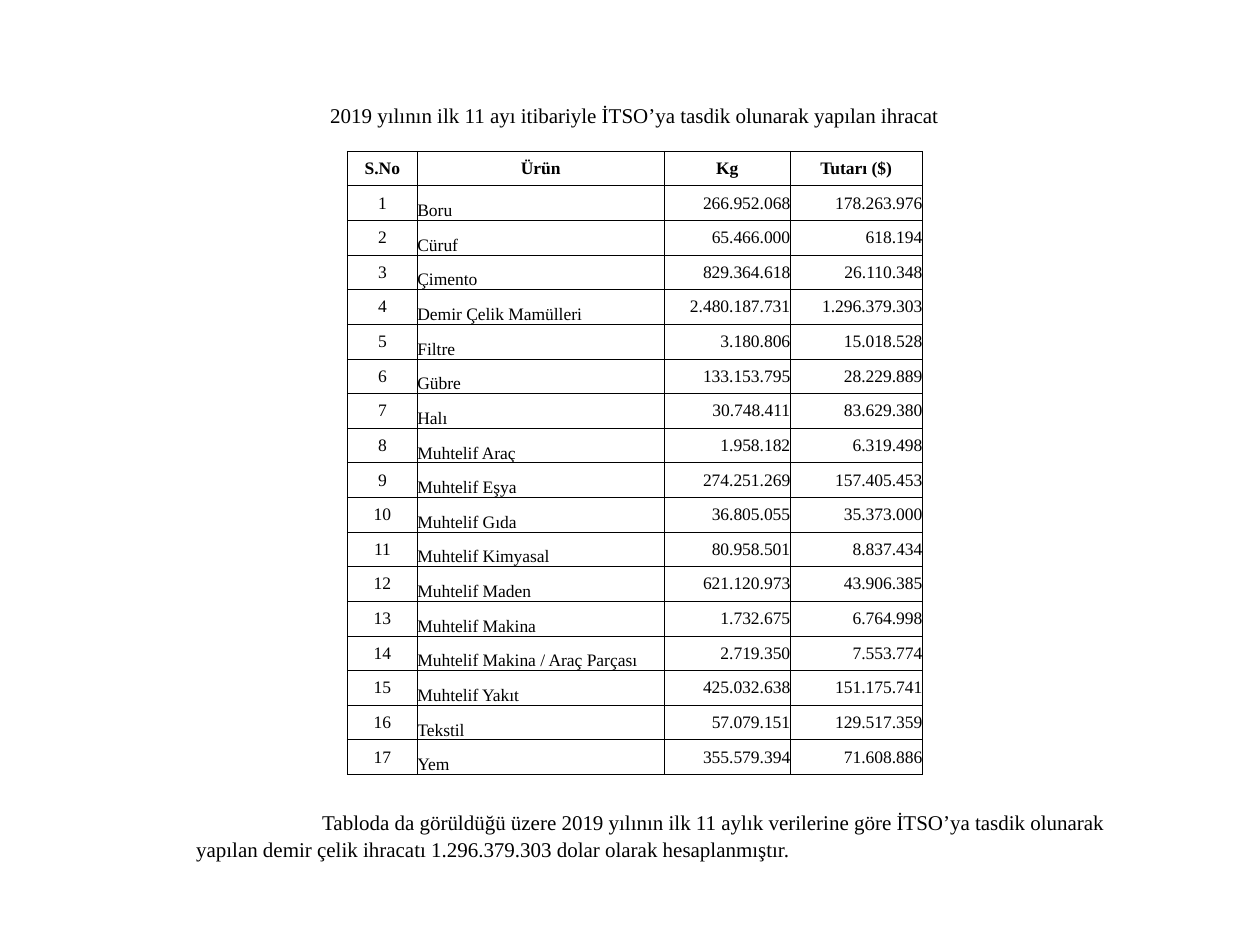
from lxml import etree
from pptx import Presentation
from pptx.dml.color import RGBColor
from pptx.enum.text import MSO_ANCHOR, MSO_AUTO_SIZE, PP_ALIGN
from pptx.oxml.ns import qn
from pptx.util import Pt

LEFT, CENTER, RIGHT = PP_ALIGN.LEFT, PP_ALIGN.CENTER, PP_ALIGN.RIGHT
TOP, MIDDLE, BOTTOM = MSO_ANCHOR.TOP, MSO_ANCHOR.MIDDLE, MSO_ANCHOR.BOTTOM
NO_AUTOFIT = MSO_AUTO_SIZE.NONE

COLORS = {"text": "000000", "border": "000000", "background": "FFFFFF"}
FONT = "Times New Roman"
TITLE_ONLY_LAYOUT = 5

TITLE = "2019 yılının ilk 11 ayı itibariyle İTSO’ya tasdik olunarak yapılan ihracat"
SUMMARY = (
    "Tabloda da görüldüğü üzere 2019 yılının ilk 11 aylık verilerine göre İTSO’ya "
    "tasdik olunarak yapılan demir çelik ihracatı 1.296.379.303 dolar olarak "
    "hesaplanmıştır."
)
HEADERS = ("S.No", "Ürün", "Kg", "Tutarı ($)")
EXPORTS = [
    ("Boru", "266.952.068", "178.263.976"),
    ("Cüruf", "65.466.000", "618.194"),
    ("Çimento", "829.364.618", "26.110.348"),
    ("Demir Çelik Mamülleri", "2.480.187.731", "1.296.379.303"),
    ("Filtre", "3.180.806", "15.018.528"),
    ("Gübre", "133.153.795", "28.229.889"),
    ("Halı", "30.748.411", "83.629.380"),
    ("Muhtelif Araç", "1.958.182", "6.319.498"),
    ("Muhtelif Eşya", "274.251.269", "157.405.453"),
    ("Muhtelif Gıda", "36.805.055", "35.373.000"),
    ("Muhtelif Kimyasal", "80.958.501", "8.837.434"),
    ("Muhtelif Maden", "621.120.973", "43.906.385"),
    ("Muhtelif Makina", "1.732.675", "6.764.998"),
    ("Muhtelif Makina / Araç Parçası", "2.719.350", "7.553.774"),
    ("Muhtelif Yakıt", "425.032.638", "151.175.741"),
    ("Tekstil", "57.079.151", "129.517.359"),
    ("Yem", "355.579.394", "71.608.886"),
]
COLUMN_WIDTHS = (40, 141, 72, 75.5)
COLUMN_ALIGNMENTS = (CENTER, LEFT, RIGHT, RIGHT)
COLUMN_ANCHORS = (MIDDLE, BOTTOM, MIDDLE, MIDDLE)
ROW_HEIGHT = 19.8
BORDER_WIDTH = 0.5


def set_text(text_frame, text, size, alignment, bold=False):
    text_frame.text = text
    paragraph = text_frame.paragraphs[0]
    paragraph.alignment = alignment
    font = paragraph.runs[0].font
    font.name = FONT
    font.size = Pt(size)
    font.bold = bold
    font.color.rgb = RGBColor.from_string(COLORS["text"])
    return paragraph


def set_borders(cell):
    properties = cell._tc.get_or_add_tcPr()
    for position, side in enumerate(("a:lnL", "a:lnR", "a:lnT", "a:lnB")):
        line = etree.Element(qn(side), w=str(Pt(BORDER_WIDTH)))
        fill = etree.SubElement(line, qn("a:solidFill"))
        etree.SubElement(fill, qn("a:srgbClr"), val=COLORS["border"])
        properties.insert(position, line)


def add_title(slide):
    title = slide.shapes.title
    title.left, title.top, title.width, title.height = Pt(48), Pt(54.7), Pt(629.5), Pt(21.8)
    title.text_frame.auto_size = NO_AUTOFIT
    title.text_frame.vertical_anchor = MIDDLE
    set_text(title.text_frame, TITLE, 12, CENTER)


def add_export_table(slide):
    rows = [HEADERS] + [(str(number), *export) for number, export in enumerate(EXPORTS, 1)]
    table = slide.shapes.add_table(
        len(rows), len(HEADERS), Pt(198.5), Pt(86.4),
        Pt(sum(COLUMN_WIDTHS)), Pt(ROW_HEIGHT * len(rows)),
    ).table
    for column, width in zip(table.columns, COLUMN_WIDTHS):
        column.width = Pt(width)
    for row_index, values in enumerate(rows):
        table.rows[row_index].height = Pt(ROW_HEIGHT)
        is_header = row_index == 0
        for column_index, value in enumerate(values):
            cell = table.cell(row_index, column_index)
            cell.margin_left = cell.margin_right = cell.margin_top = cell.margin_bottom = 0
            cell.vertical_anchor = MIDDLE if is_header else COLUMN_ANCHORS[column_index]
            cell.fill.solid()
            cell.fill.fore_color.rgb = RGBColor.from_string(COLORS["background"])
            set_borders(cell)
            alignment = CENTER if is_header else COLUMN_ALIGNMENTS[column_index]
            set_text(cell.text_frame, value, 10, alignment, bold=is_header)


def add_summary(slide):
    summary = slide.shapes.add_textbox(Pt(105), Pt(453), Pt(544.5), Pt(44))
    text_frame = summary.text_frame
    text_frame.word_wrap = True
    text_frame.vertical_anchor = TOP
    text_frame.margin_top = Pt(8.3)
    paragraph = set_text(text_frame, SUMMARY, 12, LEFT)
    paragraph.line_spacing = Pt(15.5)
    properties = paragraph._p.get_or_add_pPr()
    properties.set("marL", "0")
    properties.set("indent", str(Pt(72)))


def main():
    presentation = Presentation()
    presentation.slide_width, presentation.slide_height = Pt(720), Pt(540)
    slide = presentation.slides.add_slide(presentation.slide_layouts[TITLE_ONLY_LAYOUT])
    add_title(slide)
    add_summary(slide)
    add_export_table(slide)
    presentation.save("out.pptx")


if __name__ == "__main__":
    main()
